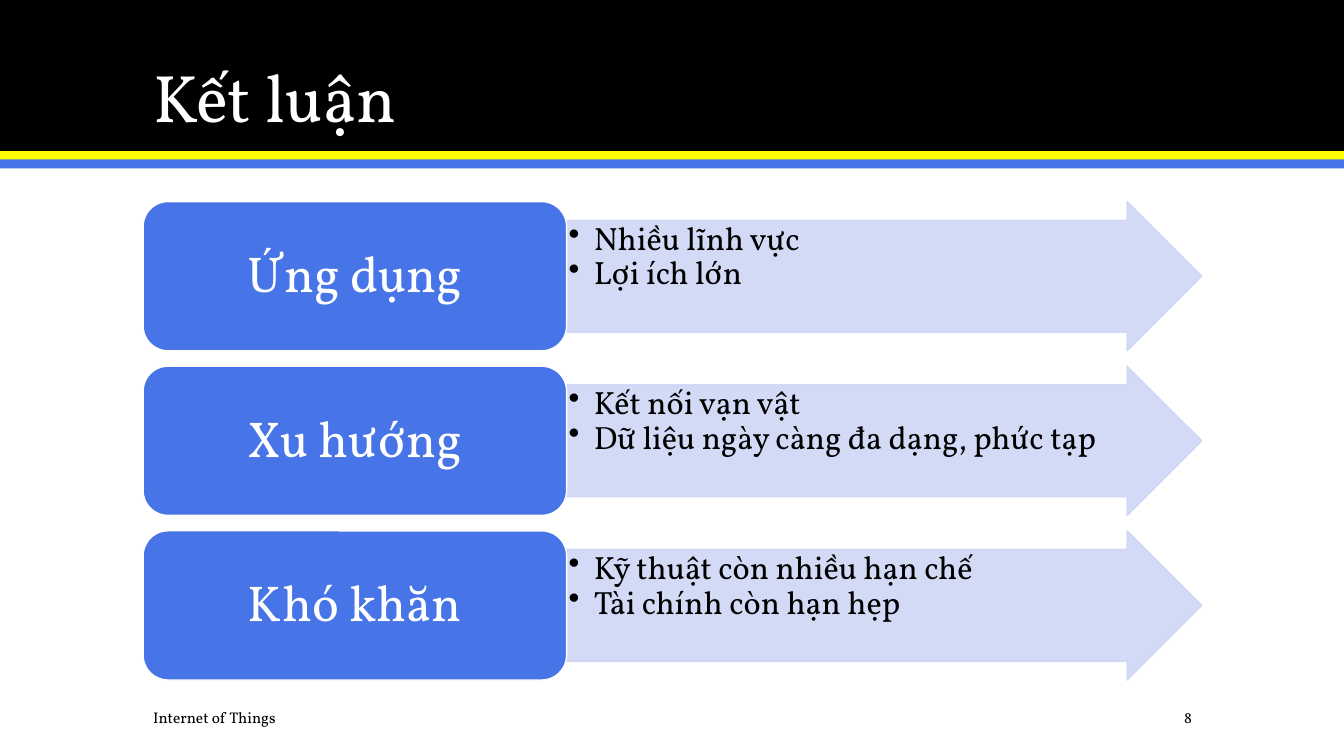
"""Build the closing slide: three topics, each with an arrow of points."""
from lxml import etree
from pptx import Presentation
from pptx.dml.color import RGBColor as RGB
from pptx.enum.shapes import MSO_SHAPE as Shape
from pptx.enum.text import MSO_ANCHOR as Anchor, PP_ALIGN as Align
from pptx.oxml.ns import qn
from pptx.util import Inches, Pt

HUES = {"black": "000000", "white": "FFFFFF", "yellow": "FFFF00",
        "blue": "4775E7", "pale": "CFD6F6"}
TOPICS = [
    ("Ứng dụng", ["Nhiều lĩnh vực", "Lợi ích lớn"]),
    ("Xu hướng", ["Kết nối vạn vật", "Dữ liệu ngày càng đa dạng, phức tạp"]),
    ("Khó khăn", ["Kỹ thuật còn nhiều hạn chế", "Tài chính còn hạn hẹp"]),
]


def write(shape, *lines, size, hue="black", align=Align.LEFT,
          anchor=Anchor.MIDDLE, pad=(0.1, 0.05), space=0.9, bullet=False):
    frame = shape.text_frame
    frame.word_wrap = True
    frame.vertical_anchor = anchor
    frame.margin_left = frame.margin_right = Inches(pad[0])
    frame.margin_top = frame.margin_bottom = Inches(pad[1])
    frame.text = "\n".join(lines)
    for para in frame.paragraphs:
        para.alignment = align
        para.line_spacing = space
        font = para.runs[0].font
        font.name, font.size = "Vollkorn", Pt(size)
        font.color.rgb = RGB.from_string(HUES[hue])
        if bullet:
            props = para._p.get_or_add_pPr()
            props.set("marL", str(Inches(0.25)))
            props.set("indent", str(Inches(-0.25)))
            etree.SubElement(props, qn("a:buChar")).set("char", "•")


def draw(kind, box, fill, line=None, alpha=None):
    shape = slide.shapes.add_shape(kind, *map(Inches, box))
    shape.shadow.inherit = False
    shape.fill.solid()
    shape.fill.fore_color.rgb = RGB.from_string(HUES[fill])
    if line:
        shape.line.color.rgb = RGB.from_string(HUES[line])
        shape.line.width = Pt(1)
    else:
        shape.line.fill.background()
    if alpha:
        for tone in shape.element.spPr.iter(qn("a:srgbClr")):
            etree.SubElement(tone, qn("a:alpha")).set("val", str(alpha * 1000))
    return shape


deck = Presentation()
deck.slide_width, deck.slide_height = Inches(13.33), Inches(7.5)
slide = deck.slides.add_slide(deck.slide_layouts[5])

for top, high, hue in [(0, 1.5, "black"), (1.5, 0.09, "yellow"), (1.58, 0.09, "blue")]:
    draw(Shape.RECTANGLE, (0, top, 13.33, high), hue)

title = slide.shapes.title
title.left, title.top, title.width, title.height = map(Inches, (1.42, 0.28, 10.5, 1.13))
write(title, "Kết luận", size=48, hue="white", anchor=Anchor.BOTTOM)
title.element.getparent().append(title.element)

for row, (name, points) in enumerate(TOPICS):
    top = 2 + row * 1.633
    arrow = draw(Shape.RIGHT_ARROW, (5.62, top, 6.3, 1.48), "pale", "pale", 90)
    arrow.adjustments[0] = 0.75
    write(arrow, *points, size=23, anchor=Anchor.TOP, pad=(0.02, 0.02), bullet=True)
    label = draw(Shape.ROUNDED_RECTANGLE, (1.42, top, 4.2, 1.48), "blue", "white")
    write(label, name, size=36, hue="white", align=Align.CENTER, pad=(0.15, 0.07))

for text, left, wide, align in [("8", 10.42, 1.5, Align.RIGHT),
                                ("Internet of Things", 1.42, 6.83, Align.LEFT)]:
    note = slide.shapes.add_textbox(*map(Inches, (left, 6.97, wide, 0.3)))
    write(note, text, size=11, align=align, space=1.0)

deck.save("out.pptx")
